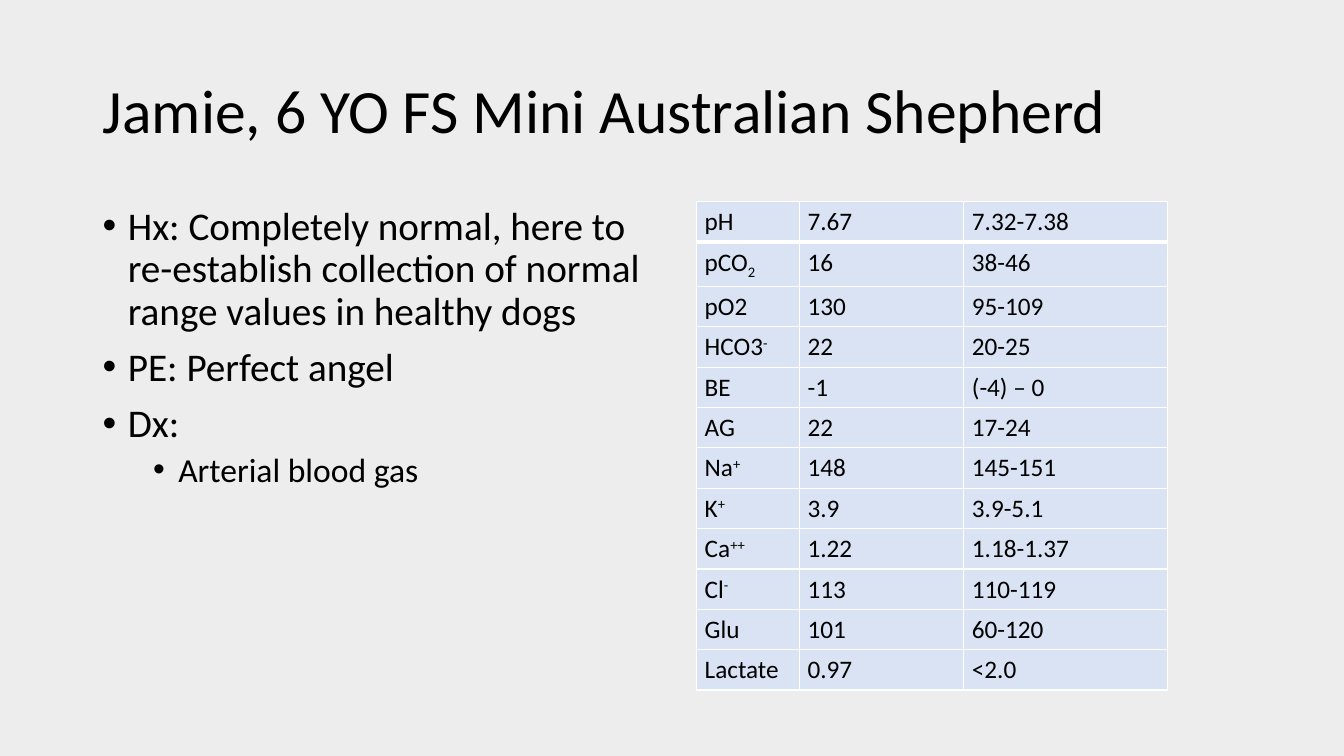
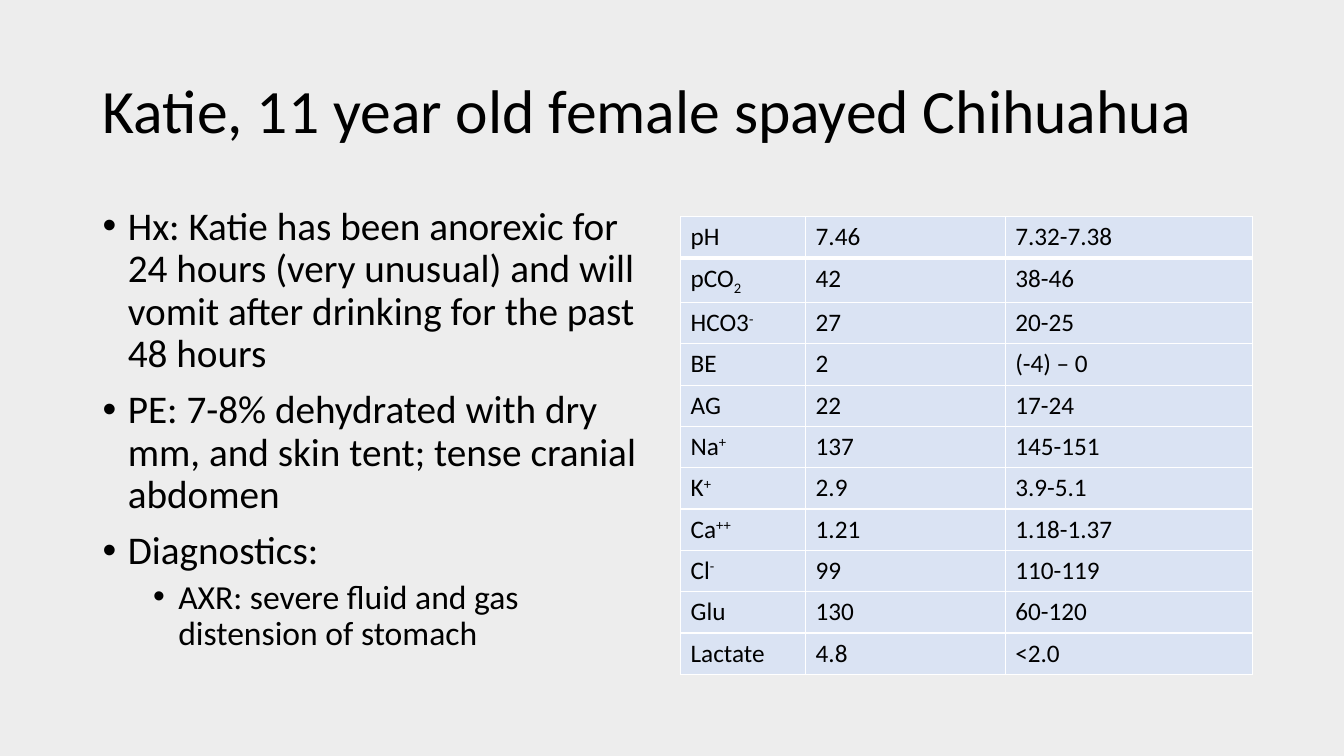
from lxml import etree
from pptx import Presentation
from pptx import util as u
from pptx.dml import color
from pptx.enum import text
from pptx.oxml import ns

COLORS = {"page": "EDEDED", "text": "000000", "cell": "DAE3F3", "rule": "FFFFFF"}
FONT = "Calibri"
TITLE_SIZE, TABLE_SIZE = 44, 18
WIDTH, HEIGHT = 13.33, 7.5
MARGIN = 0.92
BODY_TOP = 2
BODY_WIDTH, BODY_HEIGHT = 5.67, 4.76
# Outline level: (size, left indent, space before)
LEVELS = [(28, 0.25, 10), (24, 0.75, 5)]
HANGING = 0.25
RULE, HEAD_RULE = 1, 3
SUB, SUPER = -25, 30

# Name: (symbol, raised or lowered mark, its baseline shift, normal range)
ANALYTES = {
    "pH": ("pH", "", 0, "7.32-7.38"),
    "pCO2": ("pCO", "2", SUB, "38-46"),
    "pO2": ("pO2", "", 0, "95-109"),
    "HCO3": ("HCO3", "-", SUPER, "20-25"),
    "BE": ("BE", "", 0, "(-4) – 0"),
    "AG": ("AG", "", 0, "17-24"),
    "Na": ("Na", "+", SUPER, "145-151"),
    "K": ("K", "+", SUPER, "3.9-5.1"),
    "Ca": ("Ca", "++", SUPER, "1.18-1.37"),
    "Cl": ("Cl", "-", SUPER, "110-119"),
    "Glu": ("Glu", "", 0, "60-120"),
    "Lactate": ("Lactate", "", 0, "<2.0"),
}

CASES = [
    {
        "title": "Jamie, 6 YO FS Mini Australian Shepherd",
        "points": [
            (0, "Hx: Completely normal, here to re-establish collection of normal "
                "range values in healthy dogs"),
            (0, "PE: Perfect angel"),
            (0, "Dx:"),
            (1, "Arterial blood gas"),
        ],
        "values": {"pH": "7.67", "pCO2": "16", "pO2": "130", "HCO3": "22",
                   "BE": "-1", "AG": "22", "Na": "148", "K": "3.9", "Ca": "1.22",
                   "Cl": "113", "Glu": "101", "Lactate": "0.97"},
        "table": {"left": 6.91, "top": 2, "columns": (1.02, 1.63, 2.02),
                  "row": 0.39, "inset": 0.08},
    },
    {
        "title": "Katie, 11 year old female spayed Chihuahua",
        "points": [
            (0, "Hx: Katie has been anorexic for 24 hours (very unusual) and will "
                "vomit after drinking for the past 48 hours"),
            (0, "PE: 7-8% dehydrated with dry mm, and skin tent; tense cranial abdomen"),
            (0, "Diagnostics:"),
            (1, "AXR: severe fluid and gas distension of stomach"),
        ],
        "values": {"pH": "7.46", "pCO2": "42", "HCO3": "27", "BE": "2", "AG": "22",
                   "Na": "137", "K": "2.9", "Ca": "1.21", "Cl": "99",
                   "Glu": "130", "Lactate": "4.8"},
        "table": {"left": 6.75, "top": 2.15, "columns": (1.24, 1.98, 2.45),
                  "row": 0.41, "inset": 0.1},
    },
]


def paint(fill, name):
    fill.solid()
    fill.fore_color.rgb = color.RGBColor.from_string(COLORS[name])


def add_span(para, words, size, shift=0):
    """Add a run; shift is its baseline offset in percent."""
    span = para.add_run()
    span.text = words
    span.font.name = FONT
    span.font.size = u.Pt(size)
    paint(span.font.fill, "text")
    if shift:
        span.font._element.set("baseline", str(shift * 1000))


def add_title(page, words):
    title = page.shapes.title
    title.left, title.top = u.Inches(MARGIN), u.Inches(0.4)
    title.width, title.height = u.Inches(WIDTH - 2 * MARGIN), u.Inches(1.45)
    frame = title.text_frame
    frame.auto_size = text.MSO_AUTO_SIZE.NONE
    frame.vertical_anchor = text.MSO_ANCHOR.MIDDLE
    para = frame.paragraphs[0]
    para.alignment = text.PP_ALIGN.LEFT
    para.line_spacing = 0.9
    add_span(para, words, TITLE_SIZE)


def set_bullet(para, indent):
    properties = para._p.get_or_add_pPr()
    properties.set("marL", str(u.Inches(indent)))
    properties.set("indent", str(-u.Inches(HANGING)))
    etree.SubElement(properties, ns.qn("a:buFont")).set("typeface", "Arial")
    etree.SubElement(properties, ns.qn("a:buChar")).set("char", "•")


def add_points(page, points):
    box = page.shapes.add_textbox(u.Inches(MARGIN), u.Inches(BODY_TOP),
                                  u.Inches(BODY_WIDTH), u.Inches(BODY_HEIGHT))
    frame = box.text_frame
    frame.word_wrap = True
    for index, (level, words) in enumerate(points):
        para = frame.add_paragraph() if index else frame.paragraphs[0]
        size, indent, before = LEVELS[level]
        para.level = level
        para.line_spacing = 0.9
        para.space_before = u.Pt(before)
        set_bullet(para, indent)
        add_span(para, words, size)


def set_borders(cell, top, bottom):
    properties = cell._tc.get_or_add_tcPr()
    widths = {"lnL": RULE, "lnR": RULE, "lnT": top, "lnB": bottom}
    for index, (side, width) in enumerate(widths.items()):
        line = etree.Element(ns.qn("a:" + side), w=str(u.Pt(width)))
        fill = etree.SubElement(line, ns.qn("a:solidFill"))
        etree.SubElement(fill, ns.qn("a:srgbClr")).set("val", COLORS["rule"])
        properties.insert(index, line)


def fill_cell(cell, spans, inset):
    cell.margin_left = cell.margin_right = u.Inches(inset)
    cell.margin_top = cell.margin_bottom = u.Inches(0.05)
    paint(cell.fill, "cell")
    for words, shift in spans:
        add_span(cell.text_frame.paragraphs[0], words, TABLE_SIZE, shift)


def add_blood_gas(page, values, left, top, columns, row, inset):
    """Add a table of analyte, measured value and normal range."""
    frame = page.shapes.add_table(len(values), len(columns), u.Inches(left), u.Inches(top),
                                  u.Inches(sum(columns)), u.Inches(row * len(values)))
    table = frame.table
    for column, width in zip(table.columns, columns):
        column.width = u.Inches(width)
    for index, (name, value) in enumerate(values.items()):
        table.rows[index].height = u.Inches(row)
        symbol, mark, shift, normal = ANALYTES[name]
        label = [(symbol, 0)] + ([(mark, shift)] if mark else [])
        row_spans = [label, [(value, 0)], [(normal, 0)]]
        for cell, spans in zip(table.rows[index].cells, row_spans):
            fill_cell(cell, spans, inset)
            set_borders(cell, top=HEAD_RULE if index == 1 else RULE,
                        bottom=HEAD_RULE if index == 0 else RULE)


def main():
    deck = Presentation()
    deck.slide_width, deck.slide_height = u.Inches(WIDTH), u.Inches(HEIGHT)
    paint(deck.slide_master.background.fill, "page")
    title_only = deck.slide_layouts.get_by_name("Title Only")
    for case in CASES:
        page = deck.slides.add_slide(title_only)
        add_title(page, case["title"])
        add_points(page, case["points"])
        add_blood_gas(page, case["values"], **case["table"])
    deck.save("out.pptx")


if __name__ == "__main__":
    main()
